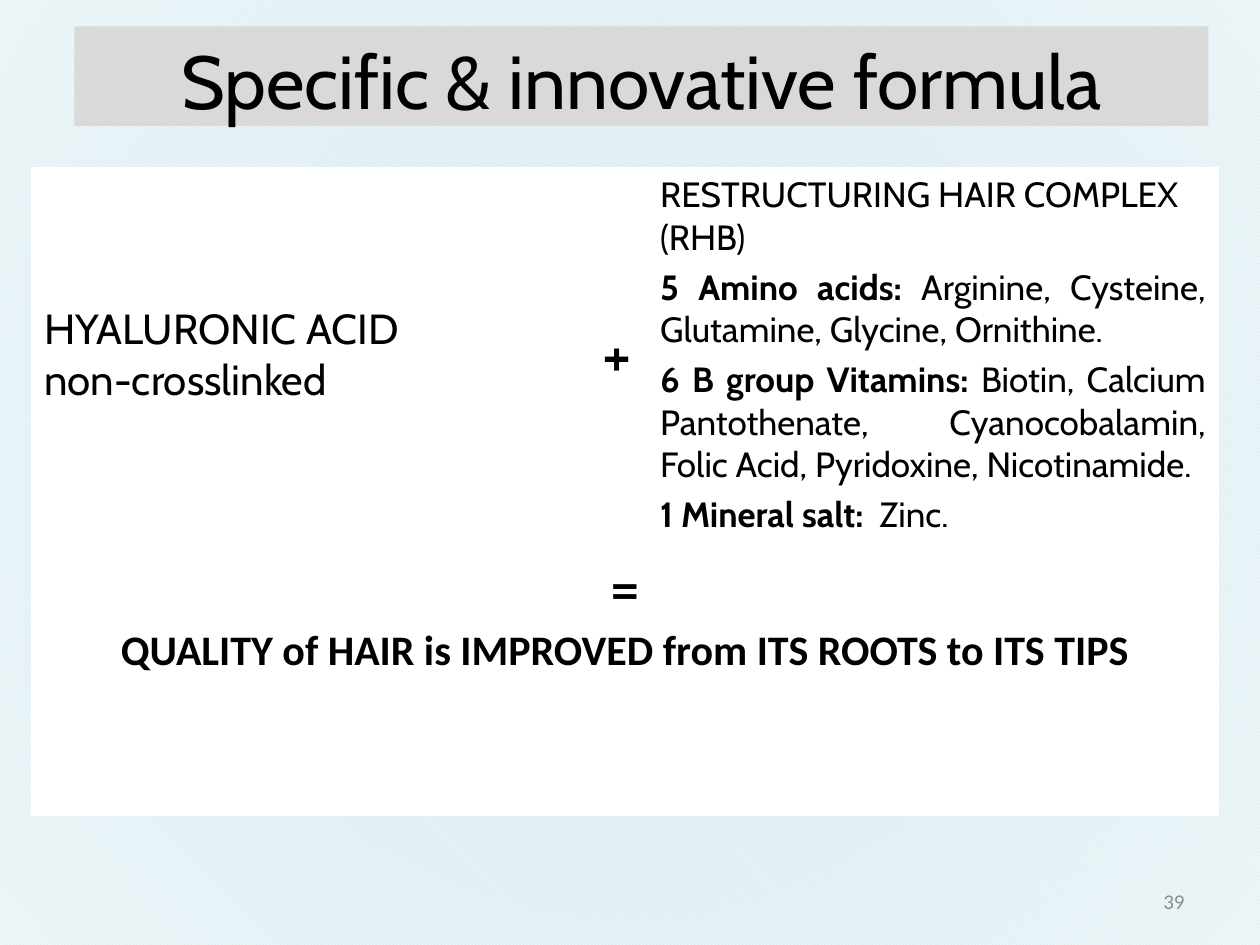
from lxml import etree
from pptx import Presentation
from pptx.dml.color import RGBColor
from pptx.enum.dml import MSO_PATTERN
from pptx.enum.shapes import MSO_SHAPE
from pptx.enum.text import MSO_ANCHOR as ANCHOR, MSO_AUTO_SIZE, PP_ALIGN as ALIGN
from pptx.oxml import parse_xml
from pptx.util import Inches, Pt

COLORS = {
    "weave": "AED3DC",
    "sky": "DBEEF4",
    "white": "FFFFFF",
    "banner": "D9D9D9",
    "ink": "000000",
    "number": "8C8C8C",
}
DRAWING_NS = "http://schemas.openxmlformats.org/drawingml/2006/main"
COMPLEX = [
    ("", "RESTRUCTURING HAIR COMPLEX (RHB)"),
    ("5 Amino acids: ", "Arginine, Cysteine, Glutamine, Glycine, Ornithine."),
    ("6 B group Vitamins: ", "Biotin, Calcium Pantothenate, Cyanocobalamin, "
     "Folic Acid, Pyridoxine, Nicotinamide."),
    ("1 Mineral salt:  ", "Zinc."),
]


def rgb(name):
    return RGBColor.from_string(COLORS[name])


def write(frame, text, lead="", size=24, font="Cabin", color="ink", bold=False,
          align=ALIGN.CENTER, space=0, hanging=0):
    paragraph = frame.paragraphs[0]
    if paragraph.runs:
        paragraph = frame.add_paragraph()
    paragraph.alignment = align
    paragraph.space_before = paragraph.space_after = Pt(space)
    if hanging:
        properties = paragraph._p.get_or_add_pPr()
        properties.set("marL", str(Inches(hanging)))
        properties.set("indent", str(-Inches(hanging)))
    for words, heavy in ((lead, True), (text, bold)):
        if words:
            run = paragraph.add_run()
            run.text = words
            run.font.size = Pt(size)
            run.font.name = font
            run.font.bold = heavy
            run.font.color.rgb = rgb(color)


def add_backdrop(slide, position):
    backdrop = slide.shapes.add_shape(
        MSO_SHAPE.RECTANGLE, 0, 0, Inches(10), Inches(7.5))
    backdrop.shadow.inherit = False
    backdrop.line.fill.background()
    slide.shapes._spTree.insert(position, backdrop._element)
    return backdrop


def weave(backdrop):
    backdrop.fill.patterned()
    backdrop.fill.pattern = MSO_PATTERN.LIGHT_DOWNWARD_DIAGONAL
    backdrop.fill.fore_color.rgb = rgb("weave")
    backdrop.fill.back_color.rgb = rgb("sky")


def veil(backdrop):
    stops = "".join(
        f'<a:gs pos="{place * 1000}"><a:srgbClr val="{COLORS["white"]}">'
        f'<a:alpha val="{opacity * 1000}"/></a:srgbClr></a:gs>'
        for place, opacity in ((0, 12), (100, 55)))
    gradient = parse_xml(
        f'<a:gradFill xmlns:a="{DRAWING_NS}"><a:gsLst>{stops}</a:gsLst>'
        '<a:path path="circle"><a:fillToRect l="50000" t="50000" r="50000" '
        'b="50000"/></a:path></a:gradFill>')
    geometry = backdrop._element.spPr.find(etree.QName(DRAWING_NS, "prstGeom").text)
    geometry.addnext(gradient)


def add_title(slide):
    title = slide.shapes.title
    title.left, title.top = Inches(0.59), Inches(0.21)
    title.width, title.height = Inches(9), Inches(0.79)
    title.fill.solid()
    title.fill.fore_color.rgb = rgb("banner")
    frame = title.text_frame
    frame.auto_size = MSO_AUTO_SIZE.NONE
    frame.vertical_anchor = ANCHOR.MIDDLE
    frame.margin_left = frame.margin_right = frame.margin_bottom = 0
    frame.margin_top = Inches(0.05)
    write(frame, "Specific & innovative formula", size=42.9)


def add_formula(slide):
    table = slide.shapes.add_table(
        2, 3, Inches(0.25), Inches(1.33), Inches(9.42), Inches(5.1)).table
    table.first_row = table.horz_banding = False
    for column, width in zip(table.columns, (4.41, 0.48, 4.53)):
        column.width = Inches(width)
    for row, height in zip(table.rows, (2.94, 2.16)):
        row.height = Inches(height)
    for cell in table.iter_cells():
        cell.fill.solid()
        cell.fill.fore_color.rgb = rgb("white")
    table.cell(1, 0).merge(table.cell(1, 2))

    acid, plus, blend = table.rows[0].cells
    for cell in (acid, plus, blend):
        cell.vertical_anchor = ANCHOR.MIDDLE
    for line in ("HYALURONIC ACID", "non-crosslinked"):
        write(acid.text_frame, line, align=ALIGN.JUSTIFY)
    write(plus.text_frame, "+", size=36, space=6)
    for lead, text in COMPLEX:
        write(blend.text_frame, text, lead=lead, size=20, space=2,
              align=ALIGN.JUSTIFY if lead else ALIGN.LEFT,
              hanging=1.47 if text == "Zinc." else 0)

    result = table.cell(1, 0).text_frame
    write(result, "=", size=36)
    write(result, "QUALITY of HAIR is IMPROVED from ITS ROOTS to ITS TIPS",
          font="Calibri", bold=True)


def add_page_number(slide):
    frame = slide.shapes.add_textbox(
        Inches(7.17), Inches(6.95), Inches(2.33), Inches(0.4)).text_frame
    frame.word_wrap = True
    frame.vertical_anchor = ANCHOR.MIDDLE
    write(frame, "39", size=12, font="Calibri", color="number", align=ALIGN.RIGHT)


def main():
    deck = Presentation()
    deck.slide_width, deck.slide_height = Inches(10), Inches(7.5)
    slide = deck.slides.add_slide(deck.slide_layouts[5])
    weave(add_backdrop(slide, 2))
    veil(add_backdrop(slide, 3))
    add_title(slide)
    add_formula(slide)
    add_page_number(slide)
    deck.save("out.pptx")


if __name__ == "__main__":
    main()
